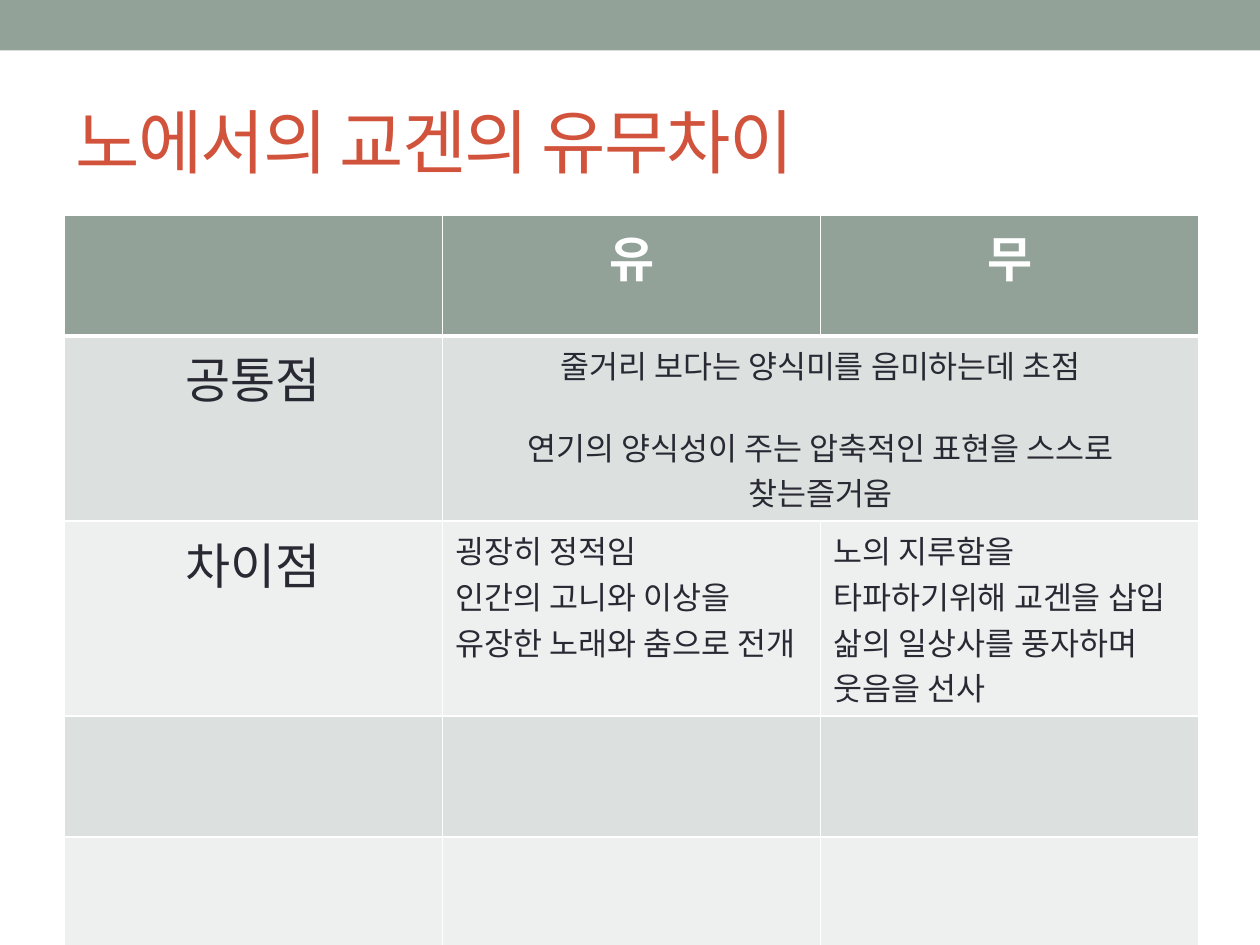
from lxml.etree import SubElement
from pptx import Presentation
from pptx.dml.color import RGBColor
from pptx.enum.shapes import MSO_SHAPE
from pptx.enum.text import MSO_ANCHOR, PP_ALIGN
from pptx.oxml.ns import qn
from pptx.util import Cm, Pt

SAGE, RUST, INK, WHITE = "93A299", "D2533C", "292934", "FFFFFF"
BANDS = ["DCE0DE", "EEF0EF"]
COMMON = ["줄거리 보다는 양식미를 음미하는데 초점",
          "연기의 양식성이 주는 압축적인 표현을 스스로 찾는즐거움"]
WITH_KYOGEN = ["굉장히 정적임", "인간의 고니와 이상을 유장한 노래와 춤으로 전개"]
WITHOUT_KYOGEN = ["노의 지루함을 타파하기위해 교겐을 삽입", "삶의 일상사를 풍자하며 웃음을 선사"]


def rgb(value):
    """Turn a hex string into a colour."""
    return RGBColor.from_string(value)


def write(tf, lines, size=18, color=INK, bold=False, align=PP_ALIGN.LEFT, gap=0, spacing=0):
    """Write one formatted paragraph per line into a text frame."""
    for i, line in enumerate(lines):
        p = tf.add_paragraph() if i else tf.paragraphs[0]
        p.alignment = align
        if i and gap:
            p.space_before = Pt(gap)
        r = p.add_run()
        r.text = line
        r.font.name = "Arial"
        r.font.size = Pt(size)
        r.font.bold = bold
        r.font.color.rgb = rgb(color)
        if spacing:
            r._r.get_or_add_rPr().set("spc", str(spacing * 100))


def style_cell(cell, fill, top=1, bottom=1):
    """Give a cell white borders and a solid fill."""
    tcPr = cell._tc.get_or_add_tcPr()
    for side, width in (("L", 1), ("R", 1), ("T", top), ("B", bottom)):
        ln = SubElement(tcPr, qn(f"a:ln{side}"), w=str(Pt(width)))
        SubElement(SubElement(ln, qn("a:solidFill")), qn("a:srgbClr"), val=WHITE)
    cell.fill.solid()
    cell.fill.fore_color.rgb = rgb(fill)


def add_band(s, left, top, width, height):
    """Draw the plain band along the top of the slide."""
    sp = s.shapes.add_shape(MSO_SHAPE.RECTANGLE, left, top, width, height)
    sp.shadow.inherit = False
    sp.fill.solid()
    sp.fill.fore_color.rgb = rgb(SAGE)
    sp.line.fill.background()


def add_title(s, text, left, top, width, height):
    """Place and format the title placeholder."""
    title = s.shapes.title
    title.left, title.top, title.width, title.height = left, top, width, height
    tf = title.text_frame
    tf.word_wrap = True
    tf.vertical_anchor = MSO_ANCHOR.MIDDLE
    write(tf, [text], size=40, color=RUST, spacing=-1)


def add_comparison(s, left, top, width, row_height, rows=5, cols=3):
    """Build the banded comparison table."""
    table = s.shapes.add_table(rows, cols, left, top, width, row_height * rows).table
    for i in range(rows):
        fill = BANDS[(i - 1) % 2] if i else SAGE
        for cell in table.rows[i].cells:
            style_cell(cell, fill, top=3 if i == 1 else 1, bottom=1 if i else 3)
    table.cell(1, 1).merge(table.cell(1, 2))

    center = PP_ALIGN.CENTER
    for col, text in enumerate(["유", "무"], 1):
        write(table.cell(0, col).text_frame, [text], size=28, color=WHITE, bold=True, align=center)
    for row, text in enumerate(["공통점", "차이점"], 1):
        write(table.cell(row, 0).text_frame, [text], size=28, align=center)
    write(table.cell(1, 1).text_frame, COMMON, align=center, gap=20.5)
    for col, lines in enumerate([WITH_KYOGEN, WITHOUT_KYOGEN], 1):
        write(table.cell(2, col).text_frame, lines)


def main():
    """Build and save the slide."""
    prs = Presentation()
    prs.slide_width, prs.slide_height = Cm(25.4), Cm(19.05)
    s = prs.slides.add_slide(prs.slide_layouts[5])
    add_band(s, 0, 0, prs.slide_width, Cm(1.02))
    add_title(s, "노에서의 교겐의 유무차이", Cm(1.27), Cm(1.47), Cm(22.86), Cm(2.74))
    add_comparison(s, Cm(1.3), Cm(4.33), Cm(22.86), Cm(2.44))
    prs.save("out.pptx")


if __name__ == "__main__":
    main()
